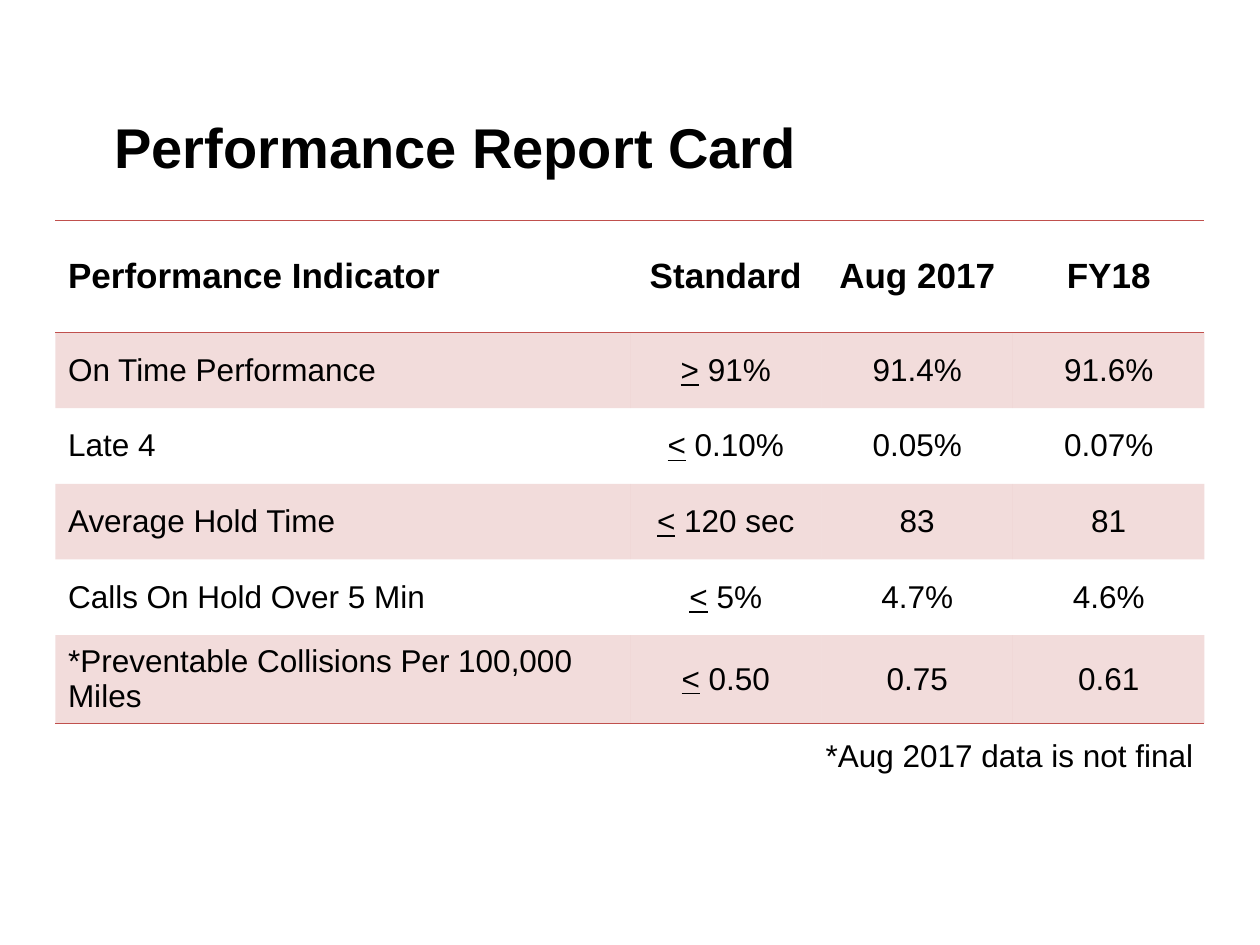
from lxml import etree
from pptx import Presentation
from pptx import util as u
from pptx.dml.color import RGBColor
from pptx.enum import text
from pptx.oxml import ns

TITLE = "Performance Report Card"
HEADINGS = ["Performance Indicator", "Standard", "Aug 2017", "FY18"]
INDICATORS = [
    ("On Time Performance", "> 91%", "91.4%", "91.6%"),
    ("Late 4", "< 0.10%", "0.05%", "0.07%"),
    ("Average Hold Time", "< 120 sec", "83", "81"),
    ("Calls On Hold Over 5 Min", "< 5%", "4.7%", "4.6%"),
    ("*Preventable Collisions Per 100,000 Miles", "< 0.50", "0.75", "0.61"),
]
FOOTNOTE = "*Aug 2017 data is not final"

THEME = {
    "font": "Arial", "ink": "000000", "accent": "C0504D",
    "tint": 20, "rule": 1, "title": 32, "heading": 20, "body": 18,
    "plain_table": "{2D5ABB26-0587-4C30-8999-92F81FD0307C}",
}
COLUMN_WIDTHS = [4.56, 1.52, 1.52, 1.52]
ROW_HEIGHTS = [0.89, 0.6, 0.6, 0.6, 0.6, 0.63]


def add_run(paragraph, words, size, bold=False, underline=False):
    run = paragraph.add_run()
    run.text = words
    formats = {"name": THEME["font"], "size": u.Pt(size),
               "bold": bold, "underline": underline}
    for key, value in formats.items():
        setattr(run.font, key, value)
    run.font.color.rgb = RGBColor.from_string(THEME["ink"])


def add_label(slide, place, words, size, align, anchor, bold=False):
    label = slide.shapes.add_textbox(*map(u.Inches, place)).text_frame
    label.word_wrap = True
    label.vertical_anchor = anchor
    label.paragraphs[0].alignment = align
    add_run(label.paragraphs[0], words, size, bold)


def add_color(parent):
    solid = etree.SubElement(parent, ns.qn("a:solidFill"))
    return etree.SubElement(solid, ns.qn("a:srgbClr"), val=THEME["accent"])


def style_cell(cell, row, last_row):
    properties = cell._tc.get_or_add_tcPr()
    ruled = {"lnT": row == 0, "lnB": row in (0, last_row)}
    for side in (side for side, shown in ruled.items() if shown):
        rule = etree.SubElement(properties, ns.qn(f"a:{side}"),
                                w=str(u.Pt(THEME["rule"])))
        add_color(rule)
    if row % 2:
        etree.SubElement(add_color(properties), ns.qn("a:alpha"),
                         val=str(THEME["tint"] * 1000))
    else:
        cell.fill.background()


def fill_cell(cell, words, row, column):
    cell.vertical_anchor = text.MSO_ANCHOR.MIDDLE
    paragraph = cell.text_frame.paragraphs[0]
    paragraph.alignment = text.PP_ALIGN.CENTER if column else text.PP_ALIGN.LEFT
    size = THEME["body"] if row else THEME["heading"]
    if row and column == 1:
        add_run(paragraph, words[0], size, underline=True)
        words = words[1:]
    add_run(paragraph, words, size, bold=row == 0)


def add_report(slide):
    rows = [HEADINGS, *INDICATORS]
    report = slide.shapes.add_table(
        len(rows), len(HEADINGS), u.Inches(0.44), u.Inches(1.75),
        u.Inches(sum(COLUMN_WIDTHS)), u.Inches(sum(ROW_HEIGHTS))).table
    report.horz_banding = False
    report._tbl.tblPr.find(ns.qn("a:tableStyleId")).text = THEME["plain_table"]
    for column, width in zip(report.columns, COLUMN_WIDTHS):
        column.width = u.Inches(width)
    for line, height in zip(report.rows, ROW_HEIGHTS):
        line.height = u.Inches(height)
    for row, values in enumerate(rows):
        for column, words in enumerate(values):
            cell = report.cell(row, column)
            fill_cell(cell, words, row, column)
            style_cell(cell, row, len(rows) - 1)


def main():
    deck = Presentation()
    deck.slide_width, deck.slide_height = u.Inches(10), u.Inches(7.5)
    slide = deck.slides.add_slide(deck.slide_layouts[6])
    add_label(slide, (0.81, 0.84, 8.39, 0.64), TITLE, THEME["title"],
              text.PP_ALIGN.LEFT, text.MSO_ANCHOR.MIDDLE, bold=True)
    add_report(slide)
    add_label(slide, (3.94, 5.79, 5.63, 0.4), FOOTNOTE, THEME["body"],
              text.PP_ALIGN.RIGHT, text.MSO_ANCHOR.TOP)
    deck.save("out.pptx")


if __name__ == "__main__":
    main()
